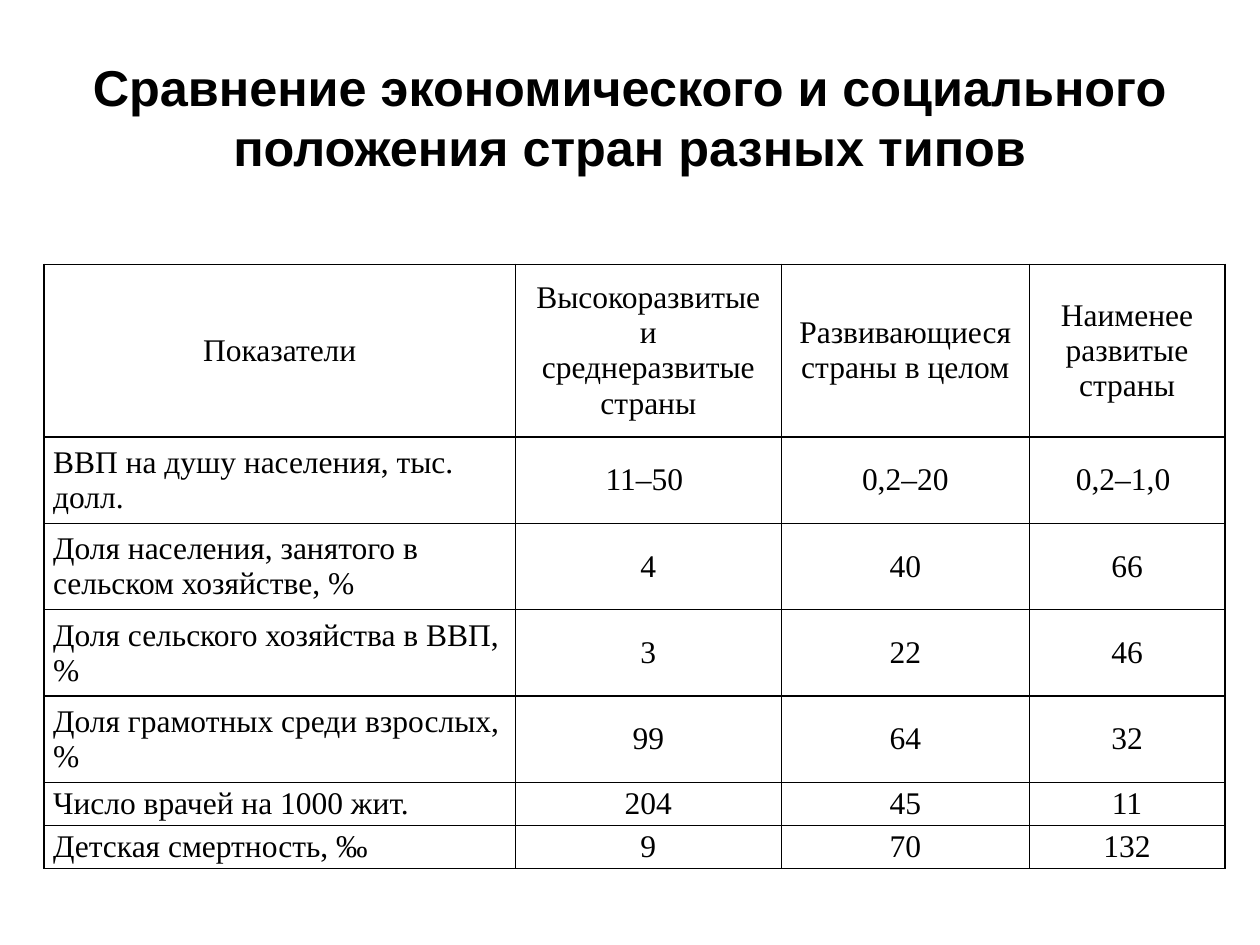
from dataclasses import dataclass
from lxml import etree
from pptx import Presentation
from pptx.dml.color import RGBColor
from pptx.enum import text
from pptx.oxml import ns
from pptx.util import Cm, Pt


@dataclass(frozen=True)
class Theme:
    ink: RGBColor = RGBColor(0, 0, 0)
    head: str = "Arial"
    body: str = "Times New Roman"
    big: float = 28.8
    small: float = 18


theme = Theme()


def style(par, name, size, bold, align):
    par.alignment = align
    font = par.font
    font.name, font.size, font.bold = name, Pt(size), bold
    font.color.rgb = theme.ink


def frame(cell):
    """Draw a thin line on all four sides of the cell."""
    props = cell._tc.get_or_add_tcPr()
    for spot, side in enumerate(("lnL", "lnR", "lnT", "lnB")):
        line = etree.Element(ns.qn(f"a:{side}"), w=str(Pt(1)))
        fill = etree.SubElement(line, ns.qn("a:solidFill"))
        etree.SubElement(fill, ns.qn("a:srgbClr"), val=str(theme.ink))
        props.insert(spot, line)


deck = Presentation()
deck.slide_width, deck.slide_height = Cm(25.4), Cm(19.05)
slide = deck.slides.add_slide(deck.slide_layouts[6])

# Title
title = slide.shapes.add_textbox(Cm(1.27), Cm(0.76), Cm(22.86), Cm(3.18)).text_frame
title.word_wrap = True
title.vertical_anchor = text.MSO_ANCHOR.MIDDLE
title.text = "Сравнение экономического и социального положения стран разных типов"
style(title.paragraphs[0], theme.head, theme.big, True, text.PP_ALIGN.CENTER)

# Table: a line break in a cell starts a new paragraph
rows = [
    ("Показатели", "Высокоразвитые и\nсреднеразвитые\nстраны",
     "Развивающиеся\nстраны в целом", "Наименее\nразвитые\nстраны"),
    ("ВВП на душу населения, тыс. долл.", "11–50 ", "0,2–20", "0,2–1,0 "),
    ("Доля населения, занятого в сельском хозяйстве, %", "4", "40", "66"),
    ("Доля сельского хозяйства в ВВП, %", "3", "22", "46"),
    ("Доля грамотных среди взрослых, %", "99", "64", "32"),
    ("Число врачей на 1000 жит.", "204", "45", "11"),
    ("Детская смертность, ‰", "9", "70", "132"),
]
widths = [9.5, 5.36, 5, 3.94]
heights = [3.48] + [1.74] * 4 + [0.87] * 2

table = slide.shapes.add_table(
    len(rows), len(widths), Cm(0.89), Cm(5.33), Cm(sum(widths)), Cm(sum(heights))
).table
table.first_row = table.horz_banding = False
for col, width in zip(table.columns, widths):
    col.width = Cm(width)
for row, height in zip(table.rows, heights):
    row.height = Cm(height)

for r, row in enumerate(rows):
    for c, words in enumerate(row):
        cell = table.cell(r, c)
        cell.fill.background()
        frame(cell)
        cell.vertical_anchor = text.MSO_ANCHOR.MIDDLE
        cell.margin_left = cell.margin_right = Cm(0.18)
        cell.margin_top = cell.margin_bottom = 0
        cell.text = words
        label = r > 0 and c == 0
        align = text.PP_ALIGN.LEFT if label else text.PP_ALIGN.CENTER
        for par in cell.text_frame.paragraphs:
            par.line_spacing = Pt(20)
            style(par, theme.body, theme.small, False, align)

deck.save("out.pptx")
